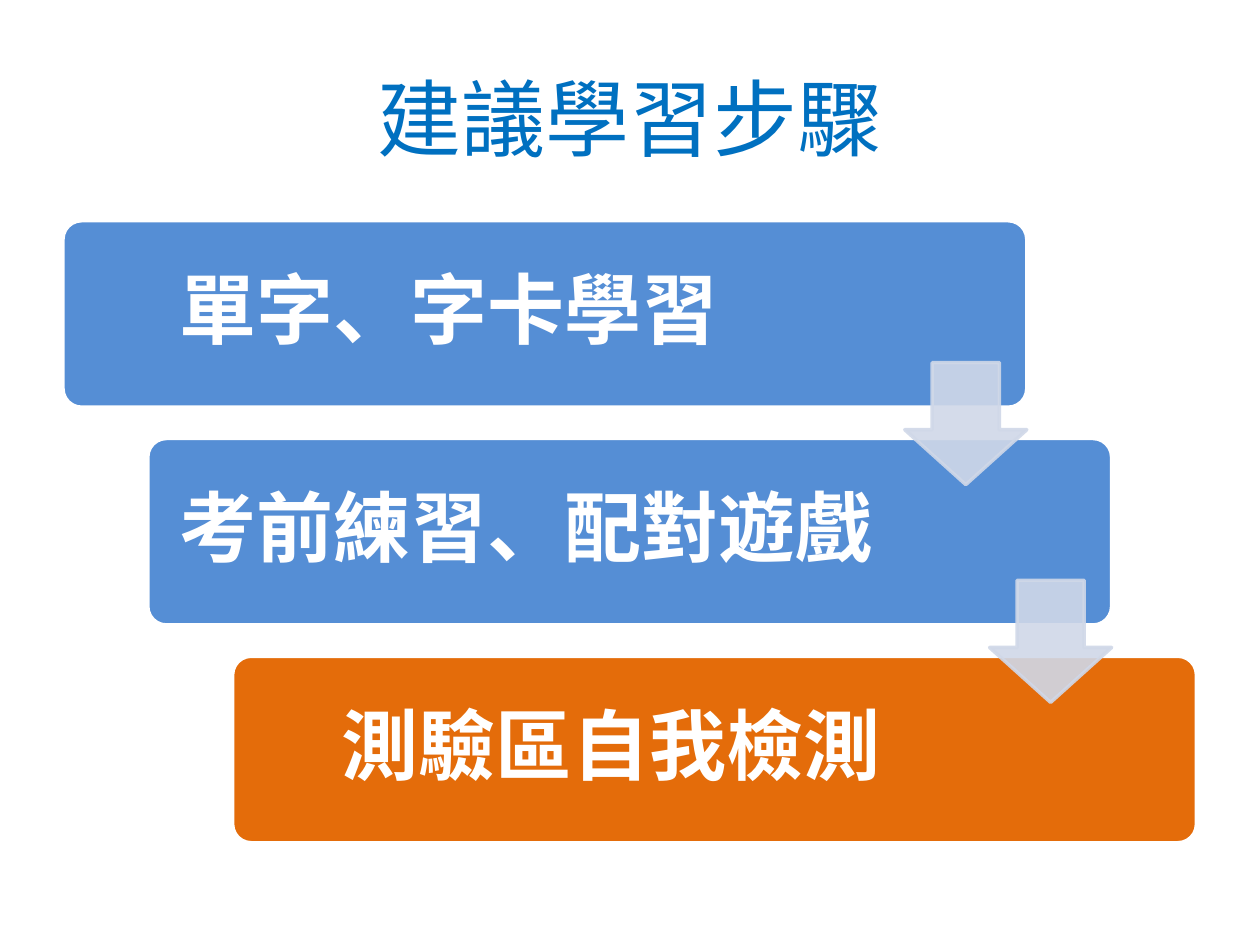
"""Build a slide of three staggered study steps joined by down arrows."""
from lxml import etree
from pptx import Presentation
from pptx.dml.color import RGBColor
from pptx.enum.shapes import MSO_SHAPE
from pptx.enum.text import MSO_ANCHOR, PP_ALIGN
from pptx.oxml.ns import qn
from pptx.util import Cm, Pt

ROUND_RECT = MSO_SHAPE.ROUNDED_RECTANGLE
DOWN_ARROW = MSO_SHAPE.DOWN_ARROW
MIDDLE = MSO_ANCHOR.MIDDLE
CENTER = PP_ALIGN.CENTER
FONT = "Noto Sans CJK SC"
STEP_X, STEP_Y = 1.71, 4.39


def rgb(value):
    return RGBColor.from_string(value)


def add_text(s, box, text, size, color, bold=False, inset=0.25, spacing=1.0):
    tf = s.shapes.add_textbox(*[Cm(v) for v in box]).text_frame
    tf.word_wrap = True
    tf.vertical_anchor = MIDDLE
    tf.margin_left = tf.margin_right = Cm(inset)
    tf.margin_top = tf.margin_bottom = Cm(inset)
    p = tf.paragraphs[0]
    p.alignment = CENTER
    p.line_spacing = spacing
    r = p.add_run()
    r.text = text
    r.font.size = Pt(size)
    r.font.bold = bold
    r.font.color.rgb = rgb(color)
    r.font.name = FONT
    etree.SubElement(r.font._element, qn("a:ea"), typeface=FONT)


prs = Presentation()
prs.slide_width, prs.slide_height = Cm(25.4), Cm(19.05)
s = prs.slides.add_slide(prs.slide_layouts[6])

add_text(s, (1.27, 0.76, 22.86, 3.18), "建議學習步驟", 48, "0070C0")

steps = [
    ("單字、字卡學習", "558ED5", 15.37),
    ("考前練習、配對遊戲", "558ED5", 15.04),
    ("測驗區自我檢測", "E46C0A", 15.04),
]
for i, (text, color, width) in enumerate(steps):
    x, y = 1.27 + i * STEP_X, 4.45 + i * STEP_Y
    sp = s.shapes.add_shape(ROUND_RECT, Cm(x), Cm(y), Cm(19.43), Cm(3.76))
    sp.adjustments[0] = 0.1
    sp.shadow.inherit = False
    sp.fill.solid()
    sp.fill.fore_color.rgb = rgb(color)
    sp.line.color.rgb = rgb("FFFFFF")
    sp.line.width = Pt(2)
    add_text(s, (x + 0.11, y + 0.11, width, 3.54), text, 44, "FFFFFF", True, 0.46, 0.9)

for i in range(len(steps) - 1):
    x, y = 18.24 + i * STEP_X, 7.31 + i * STEP_Y
    sp = s.shapes.add_shape(DOWN_ARROW, Cm(x), Cm(y), Cm(2.46), Cm(2.46))
    sp.adjustments[0], sp.adjustments[1] = 0.55, 0.45
    sp.shadow.inherit = False
    sp.fill.solid()
    sp.fill.fore_color.rgb = rgb("D0D8E8")
    sp.line.color.rgb = rgb("D0D8E8")
    sp.line.width = Pt(2)
    for clr in sp._element.spPr.iter(qn("a:srgbClr")):
        etree.SubElement(clr, qn("a:alpha"), val="90000")

prs.save("out.pptx")
